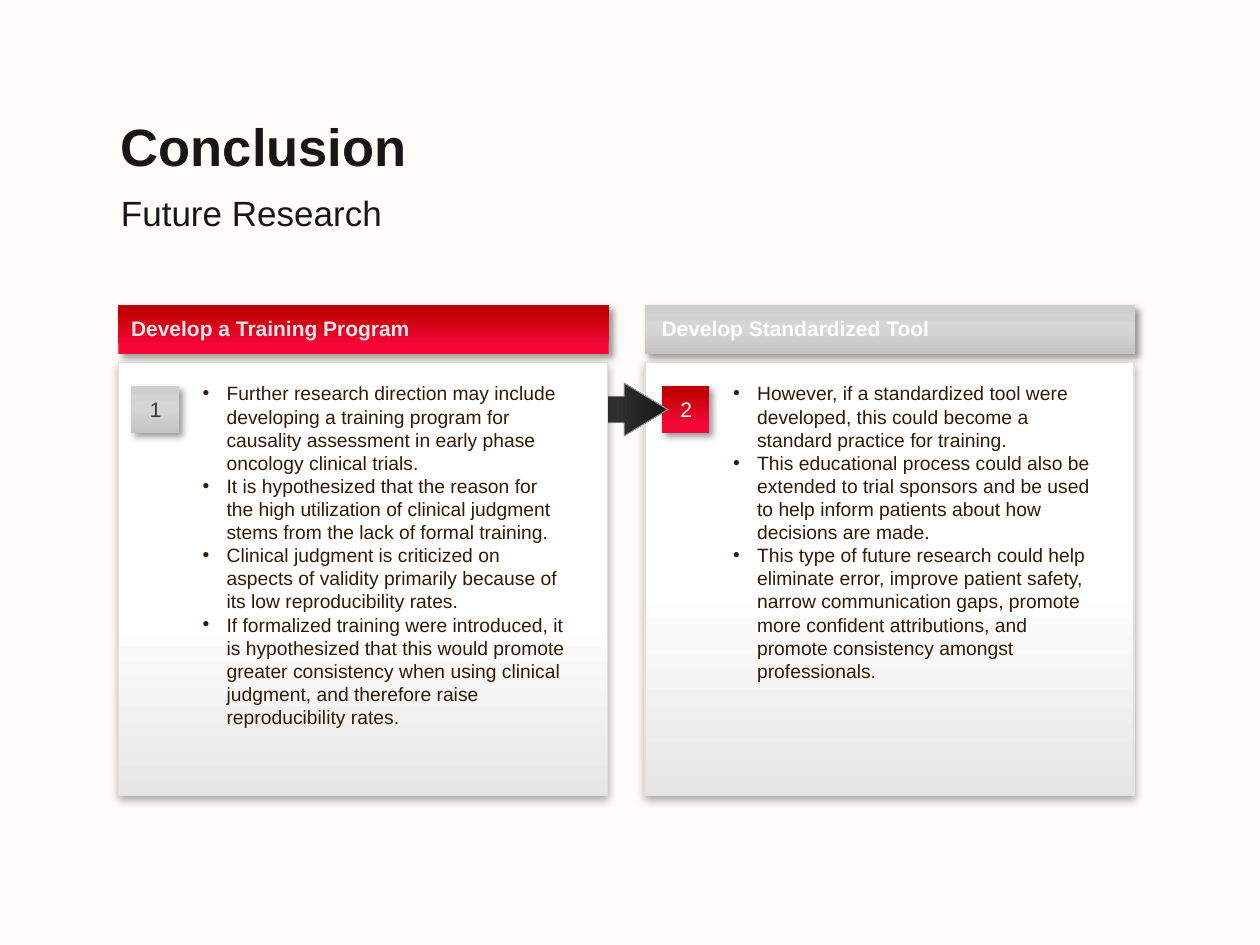
from dataclasses import dataclass

from lxml import etree
from pptx import Presentation
from pptx.dml.color import RGBColor
from pptx.enum.shapes import MSO_SHAPE
from pptx.enum.text import MSO_ANCHOR, PP_ALIGN
from pptx.oxml import parse_xml
from pptx.oxml.ns import nsdecls, qn
from pptx.util import Inches, Pt

RECTANGLE, RIGHT_ARROW = MSO_SHAPE.RECTANGLE, MSO_SHAPE.RIGHT_ARROW
TOP, MIDDLE = MSO_ANCHOR.TOP, MSO_ANCHOR.MIDDLE
LEFT, CENTER = PP_ALIGN.LEFT, PP_ALIGN.CENTER
COLUMNS, ROWS, CELL = 100, 75, Inches(0.1)


@dataclass(frozen=True)
class Theme:
    """Colours, gradients, shadows and type sizes of the deck."""
    font: str = "Arial"
    background: str = "FFFCF9"
    ink: str = "171717"
    body_ink: str = "321900"
    white: str = "FFFFFF"
    pale: str = "E6E6E6"
    charcoal: str = "353637"
    card_edge: str = "E1E1E1"
    arrow_edge: str = "A0A2A4"
    silver: tuple = (90, (0, "CFCFCF"), (50, "D5D5D5"), (100, "C4C4C4"))
    red: tuple = (270, (11, "F50736"), (20, "F50736"), (89, "C00000"))
    dark: tuple = (0, (0, "3A3A3A"), (100, "171717"))
    tile_shadow: tuple = (40, 4, 3, 45)
    card_shadow: tuple = (35, 5, 1.8, 90)
    title_size: int = 30
    subtitle_size: int = 20
    label_size: int = 12
    body_size: int = 11


@dataclass(frozen=True)
class Box:
    """A rectangle measured in grid columns and rows."""
    left: float
    top: float
    width: float
    height: float

    def inner(self, left, top, width, height):
        """Return a box placed relative to this one."""
        return Box(self.left + left, self.top + top, width, height)

    def lengths(self):
        """Return the left, top, width and height in slide units."""
        return [round(side * CELL) for side in (self.left, self.top, self.width, self.height)]


@dataclass(frozen=True)
class Topic:
    """Content and colouring of one research panel."""
    number: str
    heading: str
    points: tuple
    header_fill: tuple
    badge_fill: tuple
    heading_ink: str
    number_ink: str
    inset: float
    fade: int


THEME = Theme()
TRAINING = Topic("1", "Develop a Training Program", (
    "Further research direction may include developing a training program for causality "
    "assessment in early phase oncology clinical trials.",
    "It is hypothesized that the reason for the high utilization of clinical judgment stems "
    "from the lack of formal training.",
    "Clinical judgment is criticized on aspects of validity primarily because of its low "
    "reproducibility rates.",
    "If formalized training were introduced, it is hypothesized that this would promote "
    "greater consistency when using clinical judgment, and therefore raise reproducibility rates.",
), THEME.red, THEME.silver, THEME.pale, THEME.charcoal, 1, 41)
TOOL = Topic("2", "Develop Standardized Tool", (
    "However, if a standardized tool were developed, this could become a standard practice "
    "for training.",
    "This educational process could also be extended to trial sponsors and be used to help "
    "inform patients about how decisions are made.",
    "This type of future research could help eliminate error, improve patient safety, narrow "
    "communication gaps, promote more confident attributions, and promote consistency amongst "
    "professionals.",
), THEME.silver, THEME.red, THEME.white, THEME.white, 1.3, 49)


def add_text(slide, box, paragraphs, size, color, bold=False, align=LEFT, anchor=MIDDLE,
             side_margin=0, end_margin=0.05, spacing=None, bullets=False):
    """Place paragraphs in a wrapping text box with one format."""
    frame = slide.shapes.add_textbox(*box.lengths()).text_frame
    frame.word_wrap, frame.vertical_anchor = True, anchor
    frame.margin_left = frame.margin_right = Inches(side_margin)
    frame.margin_top = frame.margin_bottom = Inches(end_margin)
    for index, wording in enumerate(paragraphs):
        paragraph = frame.add_paragraph() if index else frame.paragraphs[0]
        paragraph.alignment = align
        if spacing:
            paragraph.line_spacing = spacing
        run = paragraph.add_run()
        run.text = wording
        run.font.name, run.font.size, run.font.bold = THEME.font, Pt(size), bold
        run.font.color.rgb = RGBColor.from_string(color)
        if bullets:
            properties = paragraph._p.get_or_add_pPr()
            properties.set("marL", str(Inches(0.19)))
            properties.set("indent", str(-Inches(0.19)))
            etree.SubElement(properties, qn("a:buFont")).set("typeface", THEME.font)
            etree.SubElement(properties, qn("a:buChar")).set("char", "•")


def add_block(slide, box, gradient, preset=RECTANGLE, edge=None, edge_width=0.75, shadow=None):
    """Place a gradient-filled preset shape and return it."""
    block = slide.shapes.add_shape(preset, *box.lengths())
    block.shadow.inherit = False
    properties = block._element.spPr
    angle, *stops = gradient
    marks = "".join(f'<a:gs pos="{position * 1000}"><a:srgbClr val="{color}"/></a:gs>'
                    for position, color in stops)
    properties.find(qn("a:prstGeom")).addnext(parse_xml(
        f'<a:gradFill {nsdecls("a")} rotWithShape="1"><a:gsLst>{marks}</a:gsLst>'
        f'<a:lin ang="{angle * 60000}" scaled="0"/></a:gradFill>'))
    if edge:
        block.line.color.rgb = RGBColor.from_string(edge)
        block.line.width = Pt(edge_width)
    else:
        block.line.fill.background()
    if shadow:
        opacity, blur, distance, direction = shadow
        properties.find(qn("a:effectLst")).append(parse_xml(
            f'<a:outerShdw {nsdecls("a")} blurRad="{Pt(blur)}" dist="{Pt(distance)}" '
            f'dir="{direction * 60000}" algn="ctr" rotWithShape="0"><a:srgbClr val="000000">'
            f'<a:alpha val="{opacity * 1000}"/></a:srgbClr></a:outerShdw>'))
    return block


def add_heading(slide, box):
    """Place the slide title above its subtitle."""
    add_text(slide, box.inner(0, 6.4, box.width, 3.9), ["Future Research"],
             THEME.subtitle_size, THEME.ink, end_margin=0)
    add_text(slide, box.inner(0, 0, box.width, 6.6), ["Conclusion"],
             THEME.title_size, THEME.ink, bold=True, spacing=0.95)


def add_panel(slide, box, topic):
    """Place a header bar, a card, a numbered badge and bullet points."""
    add_block(slide, box.inner(0, 0, box.width, 3.9), topic.header_fill, shadow=THEME.tile_shadow)
    card_fill = (270, (0, THEME.pale), (topic.fade, THEME.white), (100, THEME.white))
    add_block(slide, box.inner(0, 4.6, box.width - 0.1, box.height - 4.6), card_fill,
              edge=THEME.card_edge, shadow=THEME.card_shadow)
    badge = box.inner(topic.inset, 6.4, 3.8, 3.8)
    add_block(slide, badge, topic.badge_fill, shadow=THEME.tile_shadow)
    add_text(slide, badge.inner(4.7, -0.8, 30.8, box.height - 8.4), topic.points,
             THEME.body_size, THEME.body_ink, anchor=TOP, side_margin=0.1, bullets=True)
    add_text(slide, badge.inner(0, -5.7, 29.2, 2.4), [topic.heading],
             THEME.label_size, topic.heading_ink, bold=True, spacing=0.95)
    add_text(slide, badge.inner(0.2, 0.4, 3.5, 3), [topic.number],
             THEME.label_size, topic.number_ink, align=CENTER, side_margin=0.1)


def add_step_arrow(slide, box):
    """Place the arrow that leads from one panel to the next."""
    arrow = add_block(slide, box, THEME.dark, RIGHT_ARROW, THEME.arrow_edge, 0.5)
    arrow.adjustments[0], arrow.adjustments[1] = 0.5, 0.825


def main():
    """Build the slide and save it."""
    deck = Presentation()
    deck.slide_width, deck.slide_height = COLUMNS * CELL, ROWS * CELL
    slide = deck.slides.add_slide(deck.slide_layouts[6])
    slide.background.fill.solid()
    slide.background.fill.fore_color.rgb = RGBColor.from_string(THEME.background)
    add_heading(slide, Box(9.6, 8.5, 53.1, 10.3))
    first = Box(9.4, 24.2, 38.9, 38.9)
    add_panel(slide, first.inner(41.8, 0, first.width, first.height), TOOL)
    add_step_arrow(slide, first.inner(37.8, 6.2, 5.8, 4.2))
    add_panel(slide, first, TRAINING)
    deck.save("out.pptx")


if __name__ == "__main__":
    main()
